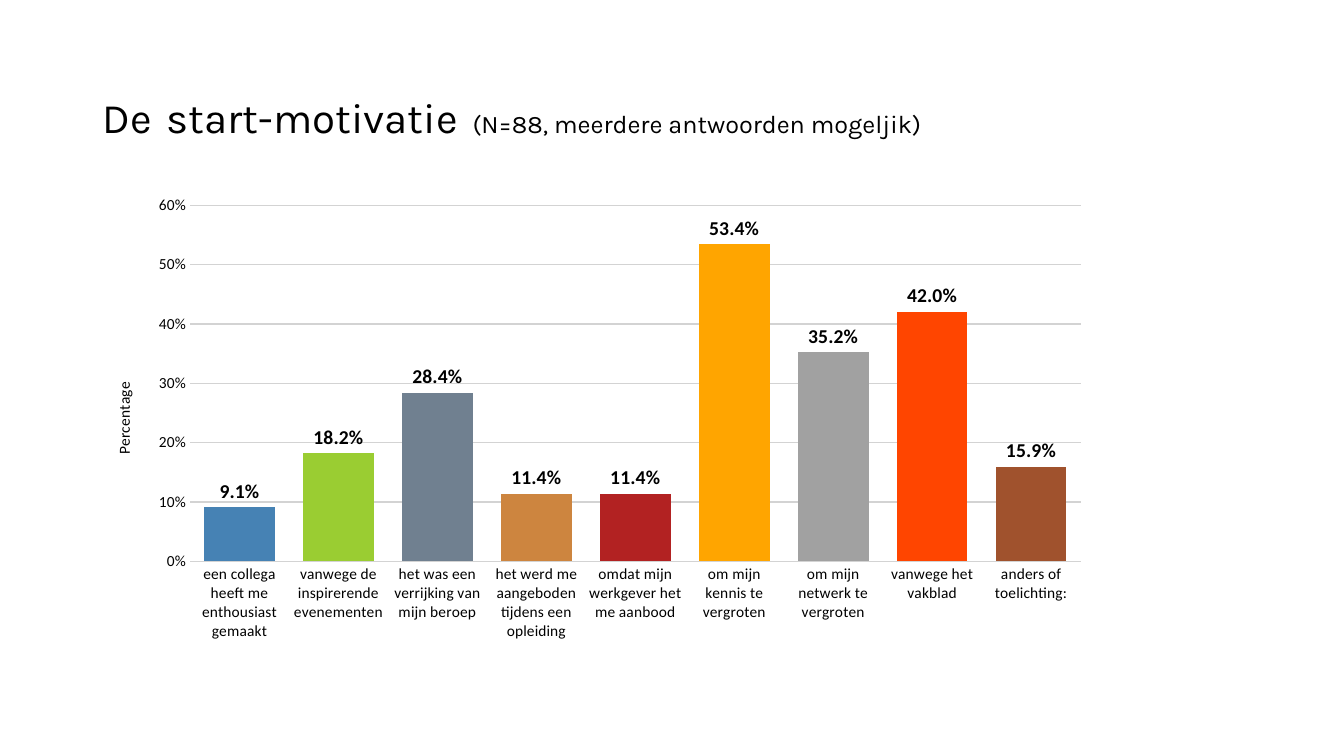
import pptx
import pptx.chart.data
import pptx.dml.color
import pptx.enum.chart
import pptx.enum.text
import pptx.util

THEME = {
    "ink": "000000", "paper": "FFFFFF", "grid": "D3D3D3",
    "head": "Karla", "body": "Calibri",
    "title": 30, "gap": 44, "note": 18, "axis": 11, "label": 14,
}

# Reason for starting, share of respondents, bar colour
MOTIVES = [
    ("een collega heeft me enthousiast gemaakt", 0.091, "4682B4"),
    ("vanwege de inspirerende evenementen", 0.182, "9ACD32"),
    ("het was een verrijking van mijn beroep", 0.284, "708090"),
    ("het werd me aangeboden tijdens een opleiding", 0.114, "CD853F"),
    ("omdat mijn werkgever het me aanbood", 0.114, "B22222"),
    ("om mijn kennis te vergroten", 0.534, "FFA500"),
    ("om mijn netwerk te vergroten", 0.352, "A1A1A1"),
    ("vanwege het vakblad", 0.42, "FF4500"),
    ("anders of toelichting:", 0.159, "A0522D"),
]


def rgb(name):
    return pptx.dml.color.RGBColor.from_string(THEME.get(name, name))


def add_text(p, text, size="axis", font="body", bold=False):
    r = p.add_run()
    r.text = text
    r.font.size = pptx.util.Pt(THEME[size])
    r.font.name = THEME[font]
    r.font.bold = bold
    r.font.color.rgb = rgb("ink")


prs = pptx.Presentation()
prs.slide_width, prs.slide_height = pptx.util.Inches(13.33), pptx.util.Inches(7.5)
W, H = prs.slide_width, prs.slide_height
s = prs.slides.add_slide(prs.slide_layouts[6])
s.background.fill.solid()
s.background.fill.fore_color.rgb = rgb("paper")
left, chart_top = int(W * 0.069), int(H * 0.2467)

# Title with a smaller note on the same line
title_top = int(H * 0.0533)
sp = s.shapes.add_textbox(left, title_top, int(W * 0.8627), chart_top - title_top)
tf = sp.text_frame
tf.word_wrap = True
tf.vertical_anchor = pptx.enum.text.MSO_ANCHOR.MIDDLE
p = tf.paragraphs[0]
p.line_spacing = 0.9
for text, size in [("De", "title"), (" ", "gap"), ("start-motivatie", "title"),
                   (" ", "gap"), ("(N=88, meerdere antwoorden mogeljik)", "note")]:
    add_text(p, text, size=size, font="head")

# Column chart
data = pptx.chart.data.CategoryChartData(number_format="0.0%")
data.categories = [motive for motive, _, _ in MOTIVES]
data.add_series("Series 1", [share for _, share, _ in MOTIVES])
chart = s.shapes.add_chart(
    pptx.enum.chart.XL_CHART_TYPE.COLUMN_CLUSTERED,
    left, chart_top, int(W * 0.75), int(H * 0.6133), data).chart
chart.has_legend = False
chart.has_title = False
chart.font.size = pptx.util.Pt(THEME["axis"])
chart.font.name = THEME["body"]
chart.font.color.rgb = rgb("ink")

# Axes
for axis in (chart.category_axis, chart.value_axis):
    axis.major_tick_mark = pptx.enum.chart.XL_TICK_MARK.INSIDE
    axis.minor_tick_mark = pptx.enum.chart.XL_TICK_MARK.NONE
    axis.format.line.fill.background()
shares = chart.value_axis
shares.minimum_scale, shares.maximum_scale, shares.major_unit = 0, 0.6, 0.1
shares.tick_labels.number_format = "0%"
shares.tick_labels.number_format_is_linked = False
shares.has_major_gridlines = True
grid = shares.major_gridlines.format.line
grid.color.rgb = rgb("grid")
grid.width = pptx.util.Pt(1)
add_text(shares.axis_title.text_frame.paragraphs[0], "Percentage")

# Bars, one colour per motive
plot = chart.plots[0]
plot.gap_width = 40
plot.vary_by_categories = False
series = plot.series[0]
series.invert_if_negative = False
for i, (_, _, color) in enumerate(MOTIVES):
    fill = series.points[i].format.fill
    fill.solid()
    fill.fore_color.rgb = rgb(color)

# Values above the bars
labels = series.data_labels
labels.show_value = True
labels.position = pptx.enum.chart.XL_LABEL_POSITION.OUTSIDE_END
labels.number_format = "0.0%"
labels.number_format_is_linked = False
labels.font.size = pptx.util.Pt(THEME["label"])
labels.font.name = THEME["body"]
labels.font.bold = True
labels.font.color.rgb = rgb("ink")

prs.save("out.pptx")
